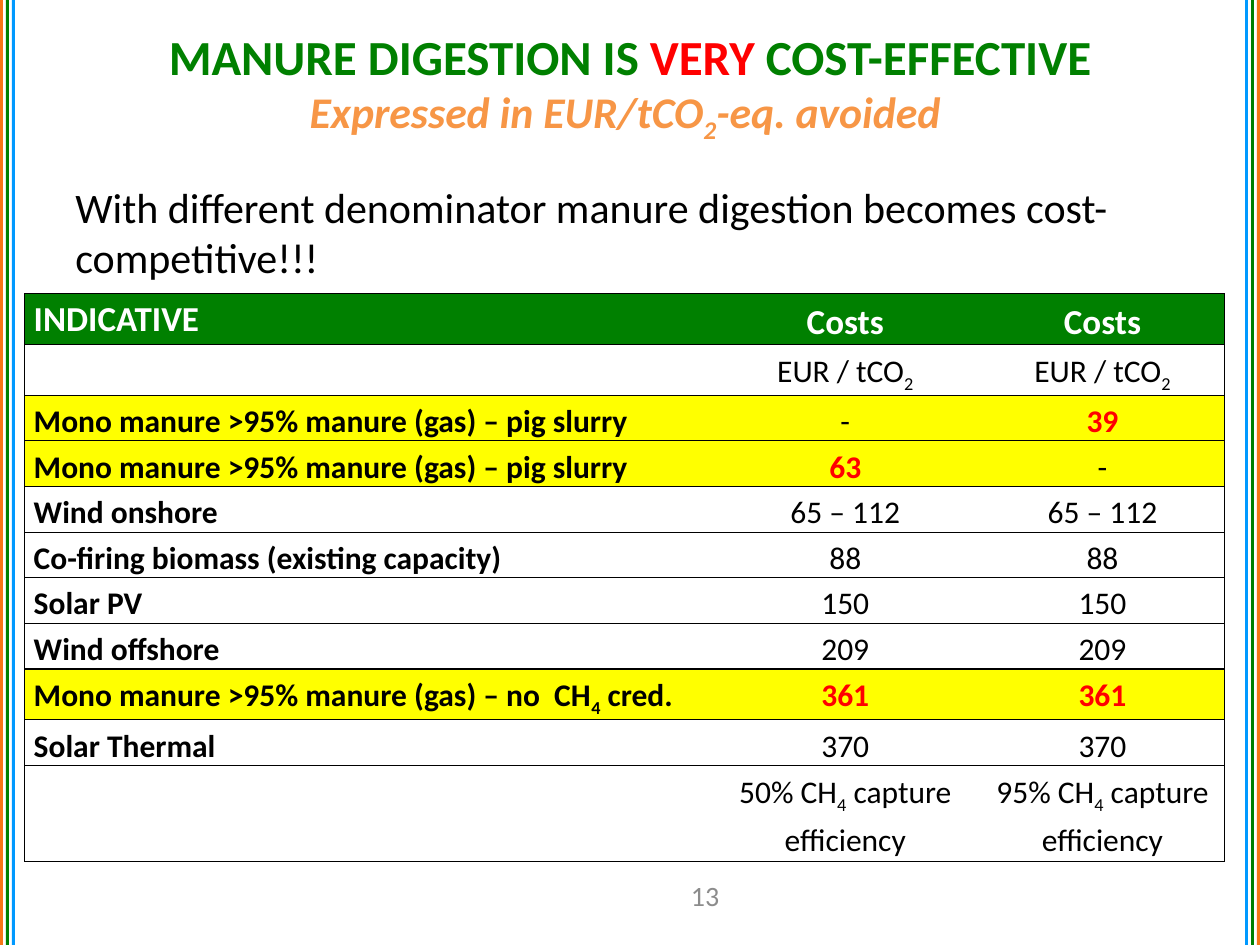
from dataclasses import dataclass

from lxml.etree import SubElement
from pptx import Presentation
from pptx.dml.color import RGBColor
from pptx.enum.shapes import MSO_SHAPE
from pptx.enum.text import MSO_ANCHOR, PP_ALIGN
from pptx.oxml.ns import qn
from pptx.util import Cm, Pt


@dataclass(frozen=True)
class Theme:
    font: str = "Calibri"
    green: str = "008000"
    red: str = "FF0000"
    orange: str = "F79646"
    stripe_orange: str = "F67616"
    blue: str = "0099FF"
    yellow: str = "FFFF00"
    white: str = "FFFFFF"
    black: str = "000000"
    grey: str = "8C8C8C"
    title_size: int = 28
    subtitle_size: int = 25
    body_size: int = 24
    header_size: int = 20
    cell_size: int = 18
    number_size: int = 16


theme = Theme()


def write(paragraph, text, size=theme.cell_size, color=theme.black, bold=False, italic=False):
    for index, piece in enumerate(text.split("~")):
        run = paragraph.add_run()
        run.text = piece
        run.font.name = theme.font
        run.font.size = Pt(size)
        run.font.bold = bold
        run.font.italic = italic
        run.font.color.rgb = RGBColor.from_string(color)
        if index % 2:
            run._r.get_or_add_rPr().set("baseline", "-25000")


def add_paragraph_box(left, top, width, height, anchor, align):
    frame = slide.shapes.add_textbox(Cm(left), Cm(top), Cm(width), Cm(height)).text_frame
    frame.word_wrap = True
    frame.vertical_anchor = anchor
    frame.paragraphs[0].alignment = align
    return frame.paragraphs[0]


deck = Presentation()
deck.slide_width, deck.slide_height = Cm(25.4), Cm(19.05)
slide = deck.slides.add_slide(deck.slide_layouts[6])

stripe_width = 0.06
for index, color in enumerate((theme.stripe_orange, theme.green, theme.blue)):
    offset = 0.12 * index
    for left in (offset, 25.4 - stripe_width - offset):
        stripe = slide.shapes.add_shape(
            MSO_SHAPE.RECTANGLE, Cm(left), 0, Cm(stripe_width), deck.slide_height)
        stripe.shadow.inherit = False
        stripe.fill.solid()
        stripe.fill.fore_color.rgb = RGBColor.from_string(color)
        stripe.line.fill.background()

page_number = add_paragraph_box(13.11, 17.53, 2.21, 1.02, MSO_ANCHOR.MIDDLE, PP_ALIGN.CENTER)
write(page_number, "13", size=theme.number_size, color=theme.grey)

title = add_paragraph_box(1.27, 0.13, 22.86, 3.18, MSO_ANCHOR.MIDDLE, PP_ALIGN.CENTER)
for words, color in (("MANURE DIGESTION IS ", theme.green), ("VERY", theme.red),
                     (" COST-EFFECTIVE", theme.green)):
    write(title, words, size=theme.title_size, color=color, bold=True)
title.add_line_break()
write(title, "Expressed in EUR/tCO~2~-eq. avoided ", size=theme.subtitle_size,
      color=theme.orange, bold=True, italic=True)

costs = [
    ("INDICATIVE", "Costs", "Costs"),
    ("", "EUR / tCO~2~", "EUR / tCO~2~"),
    ("Mono manure >95% manure (gas) – pig slurry", "-", "39"),
    ("Mono manure >95% manure (gas) – pig slurry", "63", "-"),
    ("Wind onshore", "65 – 112", "65 – 112"),
    ("Co-firing biomass (existing capacity)", "88", "88"),
    ("Solar PV", "150", "150"),
    ("Wind offshore", "209", "209"),
    ("Mono manure >95% manure (gas) – no  CH~4~ cred.", "361", "361"),
    ("Solar Thermal", "370", "370"),
    ("", "50% CH~4~ capture efficiency", "95% CH~4~ capture efficiency"),
]
column_widths = (13.82, 5.44, 4.93)
row_heights = [1.02] + [0.92] * 9 + [1.93]
cost_table = slide.shapes.add_table(
    len(costs), len(column_widths), Cm(0.5), Cm(5.92),
    Cm(sum(column_widths)), Cm(sum(row_heights))).table
cost_table.horz_banding = False
for column, width in zip(cost_table.columns, column_widths):
    column.width = Cm(width)

for row_index, (entries, height) in enumerate(zip(costs, row_heights)):
    cost_table.rows[row_index].height = Cm(height)
    header = row_index == 0
    manure = entries[0].startswith("Mono manure")
    background = theme.green if header else theme.yellow if manure else theme.white
    for column_index, entry in enumerate(entries):
        label = column_index == 0
        cell = cost_table.cell(row_index, column_index)
        cell.margin_left = cell.margin_right = Cm(0.18)
        cell.margin_top, cell.margin_bottom = Cm(0.03), 0

        properties = cell._tc.get_or_add_tcPr()
        ruled = {"lnL": label, "lnR": column_index == 2, "lnT": True, "lnB": True}
        for side, visible in ruled.items():
            border = SubElement(properties, qn(f"a:{side}"), w=str(Pt(0.75)))
            if visible:
                SubElement(SubElement(border, qn("a:solidFill")), qn("a:srgbClr"), val=theme.black)
            else:
                SubElement(border, qn("a:noFill"))
        cell.fill.solid()
        cell.fill.fore_color.rgb = RGBColor.from_string(background)

        paragraph = cell.text_frame.paragraphs[0]
        paragraph.line_spacing = 1.07 if header and label else 1.15
        if not label:
            paragraph.alignment = PP_ALIGN.CENTER
        elif not header:
            paragraph.alignment = PP_ALIGN.JUSTIFY
        emphasized = manure and not label and entry != "-"
        if entry:
            write(paragraph, entry,
                  size=theme.header_size if header else theme.cell_size,
                  color=theme.white if header else theme.red if emphasized else theme.black,
                  bold=header or label or emphasized)

message = add_paragraph_box(1.27, 3.53, 22.86, 2.79, MSO_ANCHOR.TOP, PP_ALIGN.LEFT)
write(message, "With different denominator manure digestion becomes cost-competitive!!!",
      size=theme.body_size)

deck.save("out.pptx")
